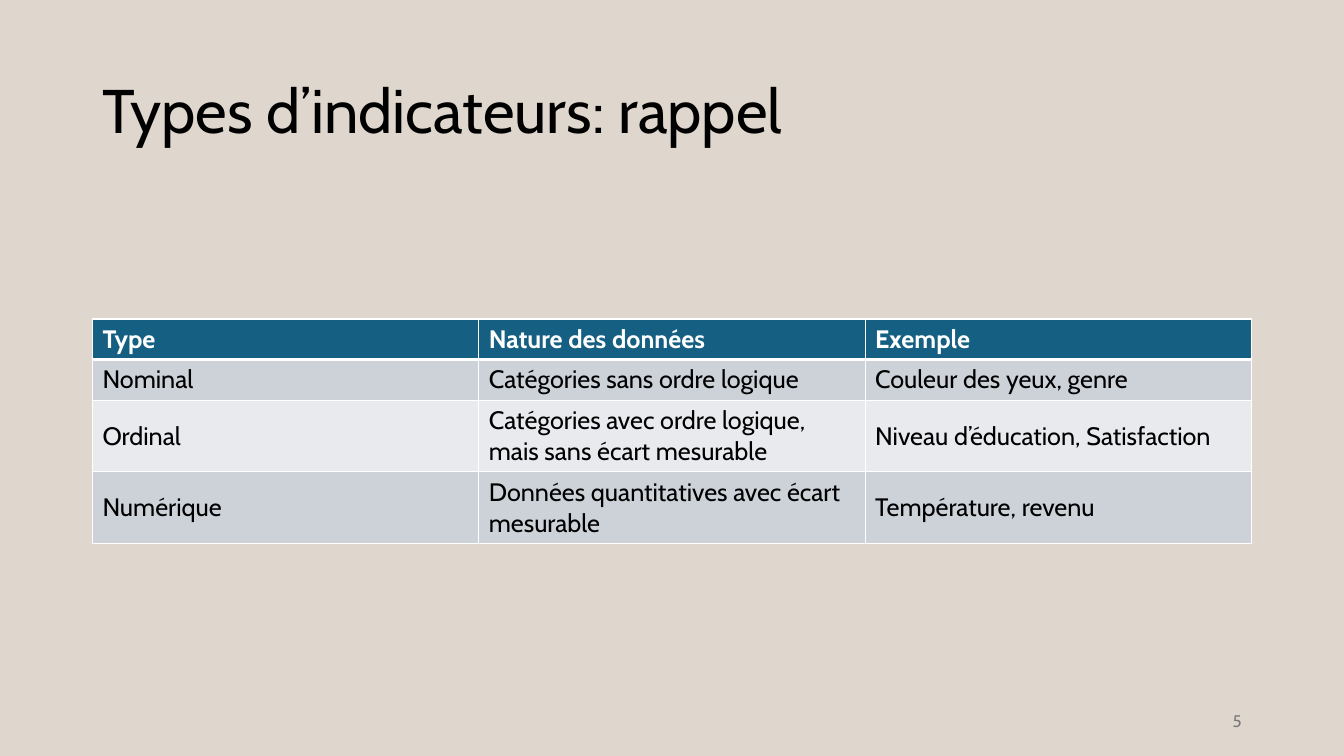
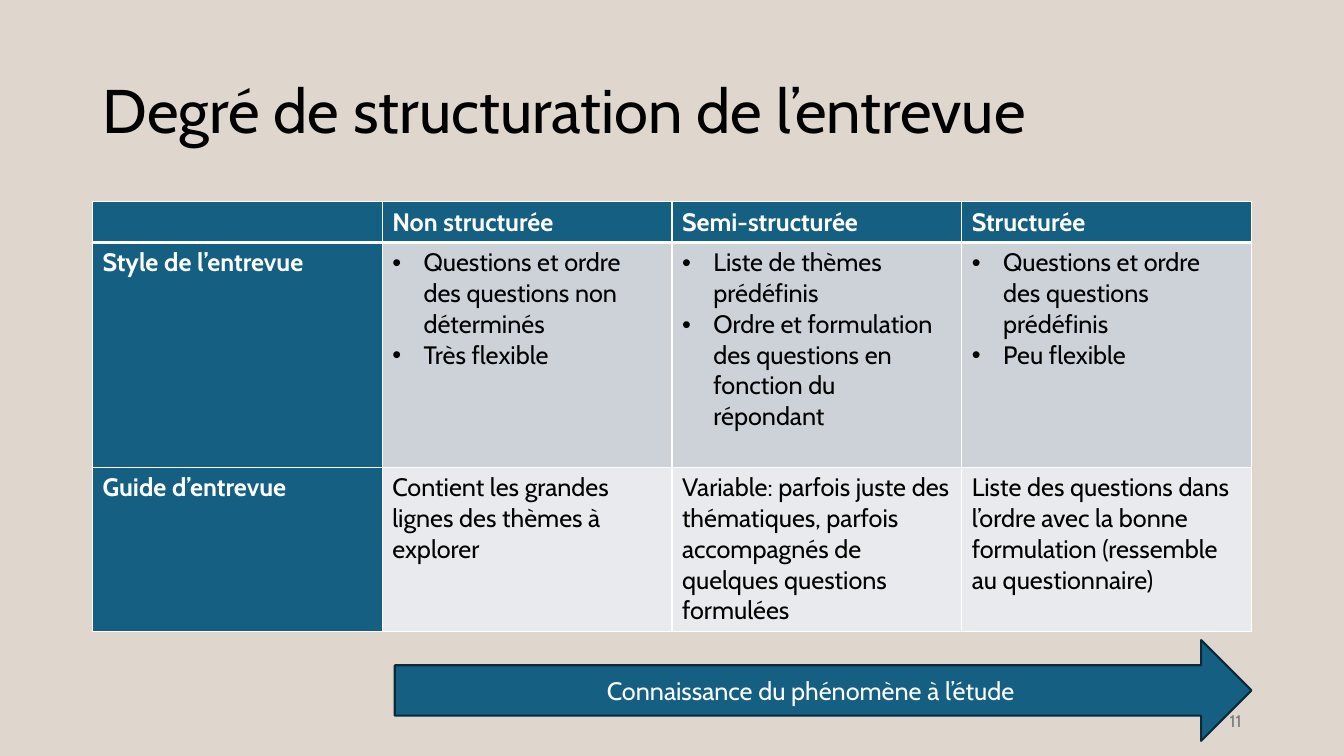
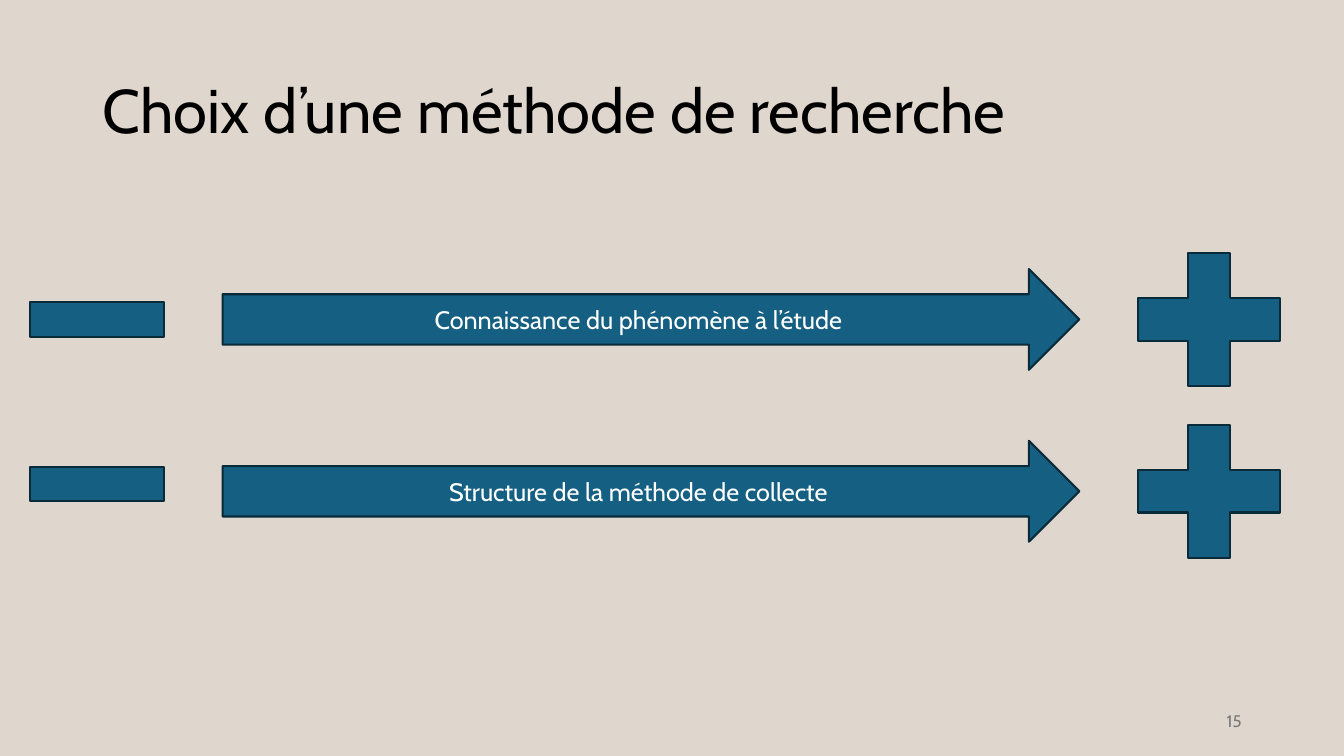
from dataclasses import dataclass

from lxml import etree
from pptx import Presentation
from pptx.dml.color import RGBColor
from pptx.enum.shapes import MSO_SHAPE as Preset
from pptx.enum.text import MSO_ANCHOR as Anchor, MSO_AUTO_SIZE as AutoSize, PP_ALIGN as Align
from pptx.oxml.ns import qn
from pptx.util import Cm, Pt

COLORS = {
    "background": "DFD7CE",
    "accent": "156082",
    "outline": "092A39",
    "band_dark": "CCD2D8",
    "band_light": "E8EAED",
    "black": "000000",
    "white": "FFFFFF",
    "number": "797979",
}
FONT = "Cabin"
MARGIN, CONTENT_WIDTH = 2.33, 29.21
ARROW_WIDTH, ARROW_HEIGHT = 21.59, 2.54
PLUS_WIDTH, PLUS_HEIGHT = 4.85, 4.55
BULLET_INDENT = Cm(0.79)


@dataclass(frozen=True)
class Box:
    """Position and size in centimetres."""
    left: float
    top: float
    width: float
    height: float

    def lengths(self) -> tuple:
        return Cm(self.left), Cm(self.top), Cm(self.width), Cm(self.height)


@dataclass(frozen=True)
class Grid:
    """Table content; a cell given as a tuple becomes a bulleted list."""
    top: float
    row_heights: tuple
    rows: tuple
    anchor: Anchor
    header_column: bool = False


@dataclass(frozen=True)
class Scale:
    label: str
    arrow_top: float
    minus_top: float


TITLE_BOX = Box(MARGIN, 1.01, CONTENT_WIDTH, 3.68)
NUMBER_BOX = Box(23.92, 17.65, 7.62, 1.01)

INDICATORS = Grid(
    top=8.04,
    row_heights=(1.02, 1.03, 1.8, 1.8),
    anchor=Anchor.MIDDLE,
    rows=(
        ("Type", "Nature des données", "Exemple"),
        ("Nominal", "Catégories sans ordre logique", "Couleur des yeux, genre"),
        ("Ordinal", "Catégories avec ordre logique, mais sans écart mesurable",
         "Niveau d’éducation, Satisfaction"),
        ("Numérique", "Données quantitatives avec écart mesurable",
         "Température, revenu"),
    ),
)
INTERVIEWS = Grid(
    top=5.08,
    row_heights=(1.03, 5.67, 4.13),
    anchor=Anchor.TOP,
    header_column=True,
    rows=(
        ("", "Non structurée", "Semi-structurée", "Structurée"),
        ("Style de l’entrevue",
         ("Questions et ordre des questions non déterminés", "Très flexible"),
         ("Liste de thèmes prédéfinis",
          "Ordre et formulation des questions en fonction du répondant"),
         ("Questions et ordre des questions prédéfinis", "Peu flexible")),
        ("Guide d’entrevue",
         "Contient les grandes lignes des thèmes à explorer",
         "Variable: parfois juste des thématiques, parfois accompagnés de "
         "quelques questions formulées",
         "Liste des questions dans l’ordre avec la bonne formulation "
         "(ressemble au questionnaire)"),
    ),
)
KNOWLEDGE = "Connaissance du phénomène à l’étude"
SCALES = (
    Scale(KNOWLEDGE, 6.78, 6.2),
    Scale("Structure de la méthode de collecte", 11.11, 10.34),
)


def rgb(name: str) -> RGBColor:
    return RGBColor.from_string(COLORS[name])


def add_bullet(para) -> None:
    properties = para._p.get_or_add_pPr()
    properties.set("marL", str(BULLET_INDENT))
    properties.set("indent", str(-BULLET_INDENT))
    etree.SubElement(properties, qn("a:buFont")).set("typeface", "Arial")
    etree.SubElement(properties, qn("a:buChar")).set("char", "•")


def write_text(frame, text, *, size=18, color="black", bold=False, align=Align.LEFT,
               anchor=Anchor.MIDDLE, spacing=None) -> None:
    """Fill a text frame; a tuple of strings gives one bullet per string."""
    bulleted = isinstance(text, tuple)
    frame.word_wrap = True
    frame.vertical_anchor = anchor
    for index, line in enumerate(text if bulleted else (text,)):
        para = frame.add_paragraph() if index else frame.paragraphs[0]
        para.alignment = align
        if spacing:
            para.line_spacing = spacing
        if bulleted:
            add_bullet(para)
        span = para.add_run()
        span.text = line
        span.font.name = FONT
        span.font.size = Pt(size)
        span.font.bold = bold
        span.font.color.rgb = rgb(color)


def add_page(deck, title: str, number: int):
    page = deck.slides.add_slide(deck.slide_layouts[5])
    heading = page.shapes.title
    heading.left, heading.top, heading.width, heading.height = TITLE_BOX.lengths()
    heading.text_frame.auto_size = AutoSize.NONE
    write_text(heading.text_frame, title, size=44, spacing=0.9)
    number_box = page.shapes.add_textbox(*NUMBER_BOX.lengths())
    write_text(number_box.text_frame, str(number), size=12, color="number", align=Align.RIGHT)
    return page


def set_borders(cell, **widths: float) -> None:
    """Draw white borders; widths in points are keyed by side: L, R, T, B."""
    properties = cell._tc.get_or_add_tcPr()
    for side, width in widths.items():
        line = etree.SubElement(properties, qn(f"a:ln{side}"), w=str(Pt(width)))
        fill = etree.SubElement(line, qn("a:solidFill"))
        etree.SubElement(fill, qn("a:srgbClr")).set("val", COLORS["white"])


def add_grid(page, grid: Grid) -> None:
    columns = len(grid.rows[0])
    box = Box(MARGIN, grid.top, CONTENT_WIDTH, sum(grid.row_heights))
    table = page.shapes.add_table(len(grid.rows), columns, *box.lengths()).table
    table.horz_banding = False
    table.first_col = grid.header_column
    for column in table.columns:
        column.width = Cm(CONTENT_WIDTH / columns)
    for row_index, (row, height) in enumerate(zip(grid.rows, grid.row_heights)):
        table.rows[row_index].height = Cm(height)
        band = "band_dark" if row_index % 2 else "band_light"
        for column_index, text in enumerate(row):
            cell = table.cell(row_index, column_index)
            header = row_index == 0 or (grid.header_column and column_index == 0)
            set_borders(cell, L=1, R=1, T=3 if row_index == 1 else 1,
                        B=3 if row_index == 0 else 1)
            cell.fill.solid()
            cell.fill.fore_color.rgb = rgb("accent" if header else band)
            cell.vertical_anchor = grid.anchor
            if text:
                write_text(cell.text_frame, text, bold=header, anchor=grid.anchor,
                           color="white" if header else "black")


def add_symbol(page, preset: Preset, box: Box):
    shape = page.shapes.add_shape(preset, *box.lengths())
    shape.shadow.inherit = False
    shape.fill.solid()
    shape.fill.fore_color.rgb = rgb("accent")
    shape.line.color.rgb = rgb("outline")
    shape.line.width = Pt(1.5)
    return shape


def add_arrow(page, label: str, left: float, top: float) -> None:
    arrow = add_symbol(page, Preset.RIGHT_ARROW, Box(left, top, ARROW_WIDTH, ARROW_HEIGHT))
    write_text(arrow.text_frame, label, color="white", align=Align.CENTER)


def add_scale(page, scale: Scale) -> None:
    """Draw an arrow running from a minus sign to a plus sign."""
    add_arrow(page, scale.label, 5.61, scale.arrow_top)
    plus_top = scale.arrow_top + (ARROW_HEIGHT - PLUS_HEIGHT) / 2
    add_symbol(page, Preset.MATH_PLUS, Box(28.04, plus_top, PLUS_WIDTH, PLUS_HEIGHT))
    add_symbol(page, Preset.MATH_MINUS, Box(0.15, scale.minus_top, 4.6, 3.71))


def main() -> None:
    deck = Presentation()
    deck.slide_width, deck.slide_height = Cm(33.87), Cm(19.05)
    background = deck.slide_master.background.fill
    background.solid()
    background.fore_color.rgb = rgb("background")

    add_grid(add_page(deck, "Types d’indicateurs: rappel", 5), INDICATORS)

    page = add_page(deck, "Degré de structuration de l’entrevue", 11)
    add_grid(page, INTERVIEWS)
    add_arrow(page, KNOWLEDGE, MARGIN + CONTENT_WIDTH - ARROW_WIDTH, 16.13)

    page = add_page(deck, "Choix d’une méthode de recherche", 15)
    for scale in SCALES:
        add_scale(page, scale)

    deck.save("out.pptx")


if __name__ == "__main__":
    main()
